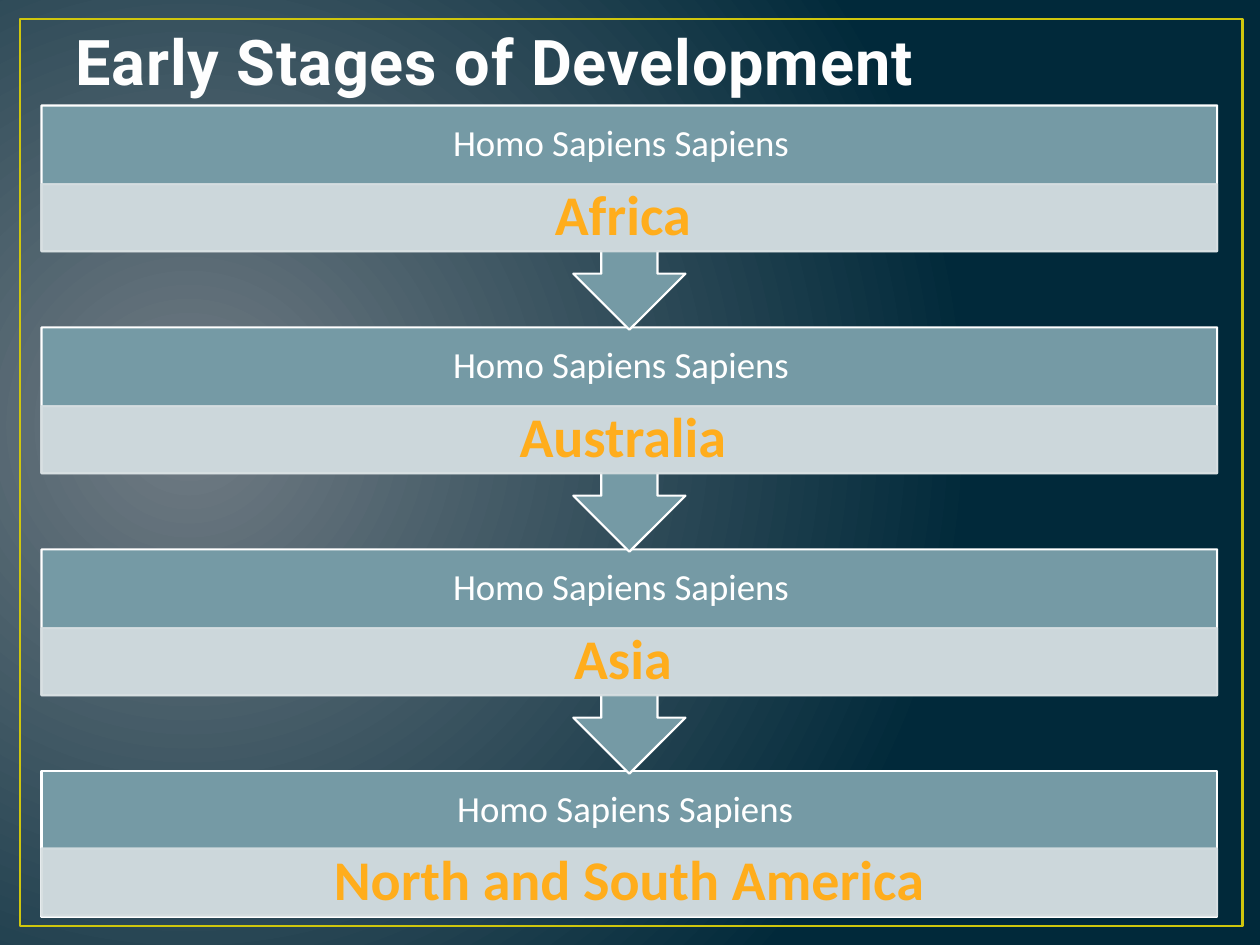
from dataclasses import dataclass

from lxml.etree import SubElement
from pptx import Presentation
from pptx.dml.color import RGBColor
from pptx.enum.shapes import MSO_SHAPE
from pptx.enum.text import MSO_ANCHOR, MSO_AUTO_SIZE, PP_ALIGN
from pptx.oxml.ns import qn
from pptx.util import Pt


@dataclass(frozen=True)
class Theme:
    glow: str = "717C84"
    navy: str = "01293A"
    gold: str = "CFC60D"
    white: str = "FFFFFF"
    title: str = "FEFEFE"
    teal: str = "759AA5"
    pale: str = "D6DEE1"
    amber: str = "FFAD1C"
    title_font: str = "Roboto"
    body_font: str = "Calibri"
    title_size: int = 36
    head_size: int = 21
    place_size: int = 32


THEME = Theme()
PLACES = ["Africa", "Australia", "Asia", "North and South America"]
LEFT, TOP, WIDTH = 23.75, 60.25, 671.75
PITCH = 126.85      # from one stage to the next
CALL_H = 128.15     # box with its arrow
LAST_H = 83.4       # box without an arrow
HEAD_H, BAND_H = 45, 38.4


def color(code):
    return RGBColor.from_string(code)


def paint_back(slide):
    fill = slide.background.fill
    fill.gradient()
    for stop, code, pos in zip(fill.gradient_stops, (THEME.glow, THEME.navy), (0, 1)):
        stop.color.rgb = color(code)
        stop.position = pos
    # Turn the linear gradient into a round one
    grad = slide.background._cSld.find(".//" + qn("a:gradFill"))
    line = grad.find(qn("a:lin"))
    if line is not None:
        grad.remove(line)
    path = SubElement(grad, qn("a:path"), path="circle")
    SubElement(path, qn("a:fillToRect"), l="15000", t="50000", r="85000", b="60000")


def add_box(slide, kind, area, fill, line, width=1.25):
    box = slide.shapes.add_shape(kind, *map(Pt, area))
    box.shadow.inherit = False
    if fill:
        box.fill.solid()
        box.fill.fore_color.rgb = color(fill)
    else:
        box.fill.background()
    box.line.color.rgb = color(line)
    box.line.width = Pt(width)
    return box


def fade(box, share):
    for tone in box._element.spPr.iter(qn("a:srgbClr")):
        SubElement(tone, qn("a:alpha"), val=str(share * 1000))


def write(frame, text, size, code, pads, bold=False):
    frame.word_wrap = True
    frame.auto_size = MSO_AUTO_SIZE.NONE
    frame.vertical_anchor = MSO_ANCHOR.MIDDLE
    (frame.margin_left, frame.margin_top,
     frame.margin_right, frame.margin_bottom) = map(Pt, pads)
    para = frame.paragraphs[0]
    para.text = text
    para.alignment = PP_ALIGN.CENTER
    para.line_spacing = 0.9
    font = para.font
    font.name, font.size, font.bold = THEME.body_font, Pt(size), bold
    font.color.rgb = color(code)


def set_title(slide, text):
    title = slide.shapes.title
    title.left, title.top, title.width, title.height = map(Pt, (36, -30.25, 648, 90))
    frame = title.text_frame
    frame.text = text
    frame.auto_size = MSO_AUTO_SIZE.NONE
    frame.vertical_anchor = MSO_ANCHOR.BOTTOM
    para = frame.paragraphs[0]
    para.alignment = PP_ALIGN.LEFT
    font = para.font
    font.name, font.size, font.bold = THEME.title_font, Pt(THEME.title_size), True
    font.color.rgb = color(THEME.title)
    para.runs[0].font._element.set("spc", "50")


def add_stage(slide, top, place, last):
    # Outer box, with an arrow to the next stage
    kind = MSO_SHAPE.RECTANGLE if last else MSO_SHAPE.UP_ARROW_CALLOUT
    area = (LEFT, top, WIDTH, LAST_H if last else CALL_H)
    box = add_box(slide, kind, area, THEME.teal, THEME.white)
    box.rotation = 0 if last else 180

    # Heading, set slightly left of centre by its right margin
    head = slide.shapes.add_textbox(*map(Pt, (LEFT, top, WIDTH, HEAD_H)))
    pads = (11.5, 11.5, 16.25 if last else 21, 11.5)
    write(head.text_frame, "Homo Sapiens Sapiens", THEME.head_size, THEME.white, pads)

    # Place name on a pale band
    drop = HEAD_H - 1 if last else HEAD_H
    area = (LEFT, top + drop, WIDTH, BAND_H)
    band = add_box(slide, MSO_SHAPE.RECTANGLE, area, THEME.pale, THEME.pale)
    fade(band, 90)
    pads = (18, 3, 18 if last else 25.25, 3)
    write(band.text_frame, place, THEME.place_size, THEME.amber, pads, bold=True)


def main():
    deck = Presentation()
    deck.slide_width, deck.slide_height = Pt(720), Pt(540)
    slide = deck.slides.add_slide(deck.slide_layouts[5])

    # Background, frame and title
    paint_back(slide)
    add_box(slide, MSO_SHAPE.RECTANGLE, (11.5, 10.8, 698.4, 518.4), None, THEME.gold, 1.5)
    set_title(slide, "Early Stages of Development")

    # Stages from the bottom up, so that each arrow tip lies on top
    end = len(PLACES) - 1
    for row in range(end, -1, -1):
        add_stage(slide, TOP + row * PITCH, PLACES[row], row == end)

    deck.save("out.pptx")


if __name__ == "__main__":
    main()
